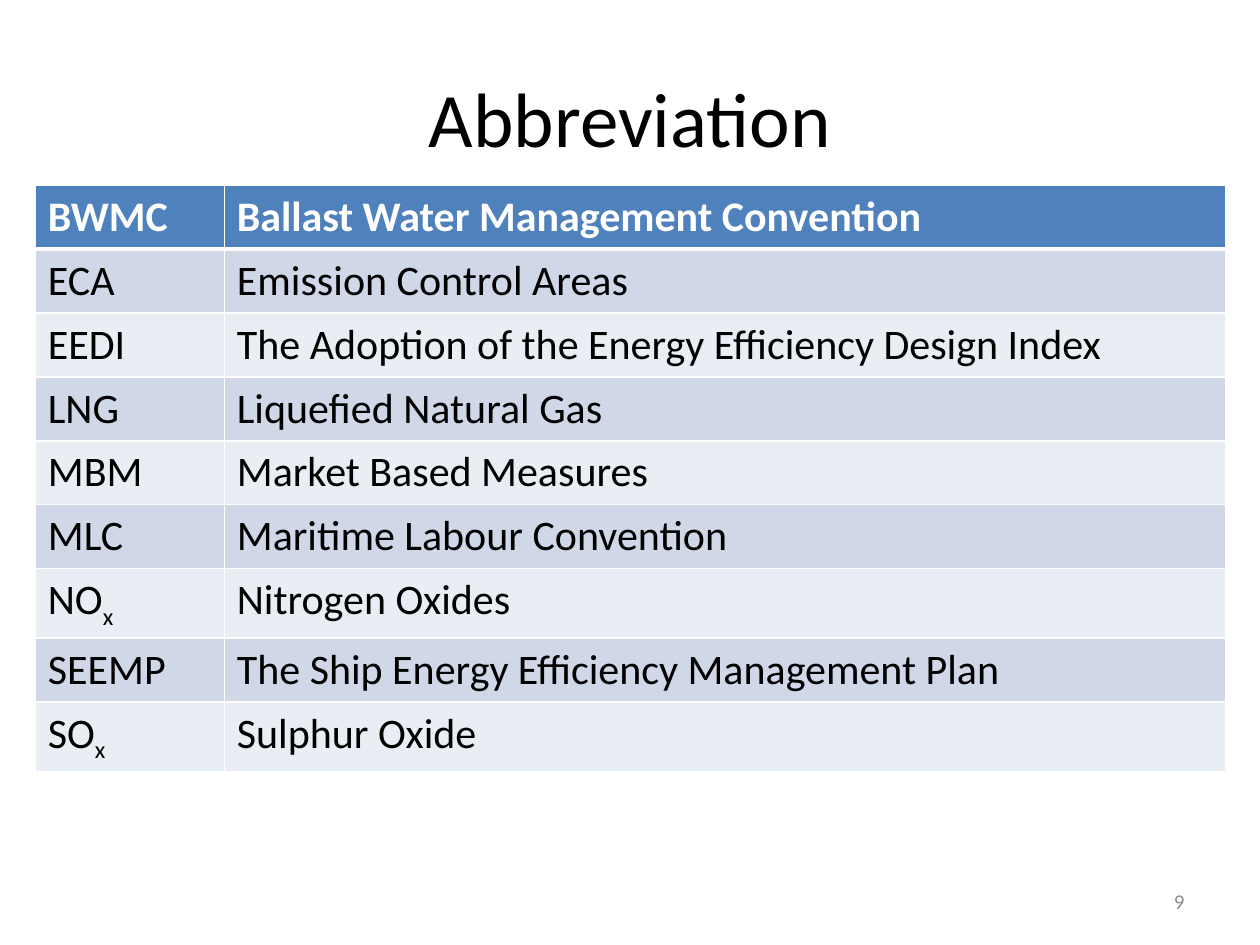
from dataclasses import dataclass
from lxml.etree import SubElement
from pptx import Presentation
from pptx.dml.color import RGBColor
from pptx.enum.text import MSO_ANCHOR, PP_ALIGN
from pptx.oxml.ns import qn
from pptx.util import Inches, Pt


@dataclass(frozen=True)
class Theme:
    """Colours, font and type sizes of the slide."""
    font: str = "Calibri"
    ink: str = "000000"
    white: str = "FFFFFF"
    grey: str = "8C8C8C"
    head: str = "4F81BD"
    bands: tuple = ("E9EDF4", "D0D8E8")
    title: int = 44
    body: int = 24
    small: int = 12


THEME = Theme()
WIDE, HIGH = 10, 7.5
COLS = (1.5, 7.95)
ROW = 0.41
TERMS = (
    ("BWMC", "Ballast Water Management Convention"),
    ("ECA", "Emission Control Areas"),
    ("EEDI", "The Adoption of the Energy Efficiency Design Index"),
    ("LNG", "Liquefied Natural Gas"),
    ("MBM", "Market Based Measures"),
    ("MLC", "Maritime Labour Convention"),
    ("NO_x", "Nitrogen Oxides"),
    ("SEEMP", "The Ship Energy Efficiency Management Plan"),
    ("SO_x", "Sulphur Oxide"),
)


def style(para, size, color, align, bold=False):
    """Set the look of one paragraph."""
    para.alignment = align
    font = para.font
    font.name, font.size, font.bold = THEME.font, Pt(size), bold
    font.color.rgb = RGBColor.from_string(color)


def place(shape, left, top, width, height):
    """Put a shape at a place given in inches."""
    shape.left, shape.top = Inches(left), Inches(top)
    shape.width, shape.height = Inches(width), Inches(height)


def add_title(slide, text):
    """Fill and place the title."""
    title = slide.shapes.title
    place(title, 0.05 * WIDE, 0.04 * HIGH, 0.9 * WIDE, 1.25)
    frame = title.text_frame
    frame.text = text
    frame.vertical_anchor = MSO_ANCHOR.MIDDLE
    style(frame.paragraphs[0], THEME.title, THEME.ink, PP_ALIGN.CENTER)


def add_edge(cell, side, width):
    """Draw one white edge of a cell."""
    props = cell._tc.get_or_add_tcPr()
    line = SubElement(props, qn(f"a:{side}"), w=str(Pt(width)))
    fill = SubElement(line, qn("a:solidFill"))
    SubElement(fill, qn("a:srgbClr"), val=THEME.white)


def fill_cell(cell, text, row):
    """Write one cell, with the part after an underscore set low."""
    head = row == 0
    for side in ("lnL", "lnR", "lnT", "lnB"):
        thick = (head and side == "lnB") or (row == 1 and side == "lnT")
        add_edge(cell, side, 3 if thick else 1)
    cell.fill.solid()
    color = THEME.head if head else THEME.bands[row % 2]
    cell.fill.fore_color.rgb = RGBColor.from_string(color)
    para = cell.text_frame.paragraphs[0]
    base, _, low = text.partition("_")
    para.add_run().text = base
    if low:
        run = para.add_run()
        run.text = low
        run.font._element.set("baseline", "-25000")
    ink = THEME.white if head else THEME.ink
    style(para, THEME.body, ink, PP_ALIGN.LEFT, head)


def add_terms(slide, terms):
    """Add the table of short and full names."""
    frame = slide.shapes.add_table(
        len(terms), len(COLS), Inches(0.28), Inches(1.47),
        Inches(sum(COLS)), Inches(ROW * len(terms)))
    table = frame.table
    for col, width in zip(table.columns, COLS):
        col.width = Inches(width)
    for row, pair in enumerate(terms):
        for col, text in enumerate(pair):
            fill_cell(table.cell(row, col), text, row)


def add_number(slide, text):
    """Add the page number at the lower right."""
    box = slide.shapes.add_textbox(0, 0, 0, 0)
    place(box, 7.17, 6.95, 2.33, 0.4)
    frame = box.text_frame
    frame.word_wrap = True
    frame.vertical_anchor = MSO_ANCHOR.MIDDLE
    frame.text = text
    style(frame.paragraphs[0], THEME.small, THEME.grey, PP_ALIGN.RIGHT)


def main():
    """Build and save the slide."""
    deck = Presentation()
    deck.slide_width, deck.slide_height = Inches(WIDE), Inches(HIGH)
    slide = deck.slides.add_slide(deck.slide_layouts[5])
    add_title(slide, "Abbreviation")
    add_terms(slide, TERMS)
    add_number(slide, "9")
    deck.save("out.pptx")


if __name__ == "__main__":
    main()
